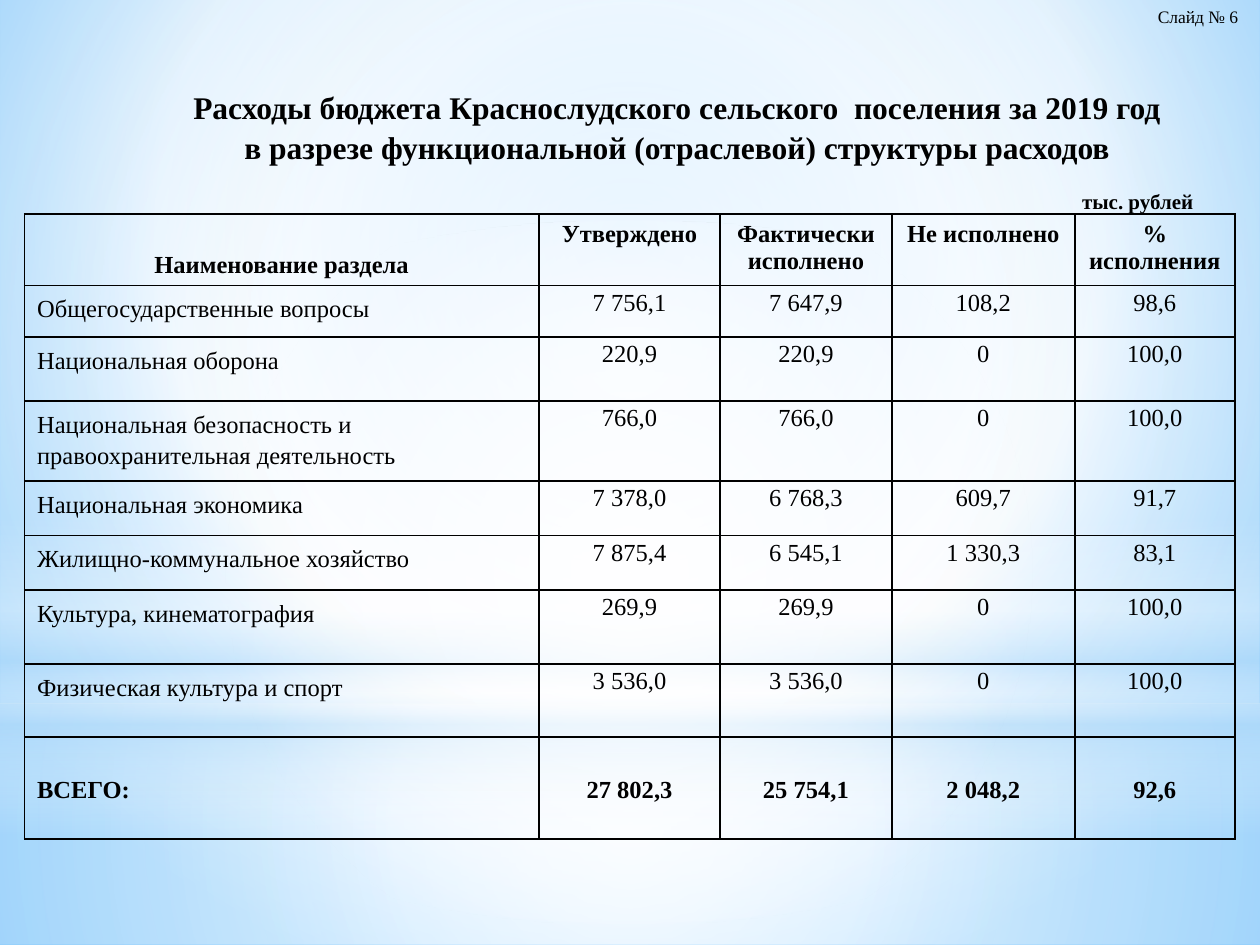
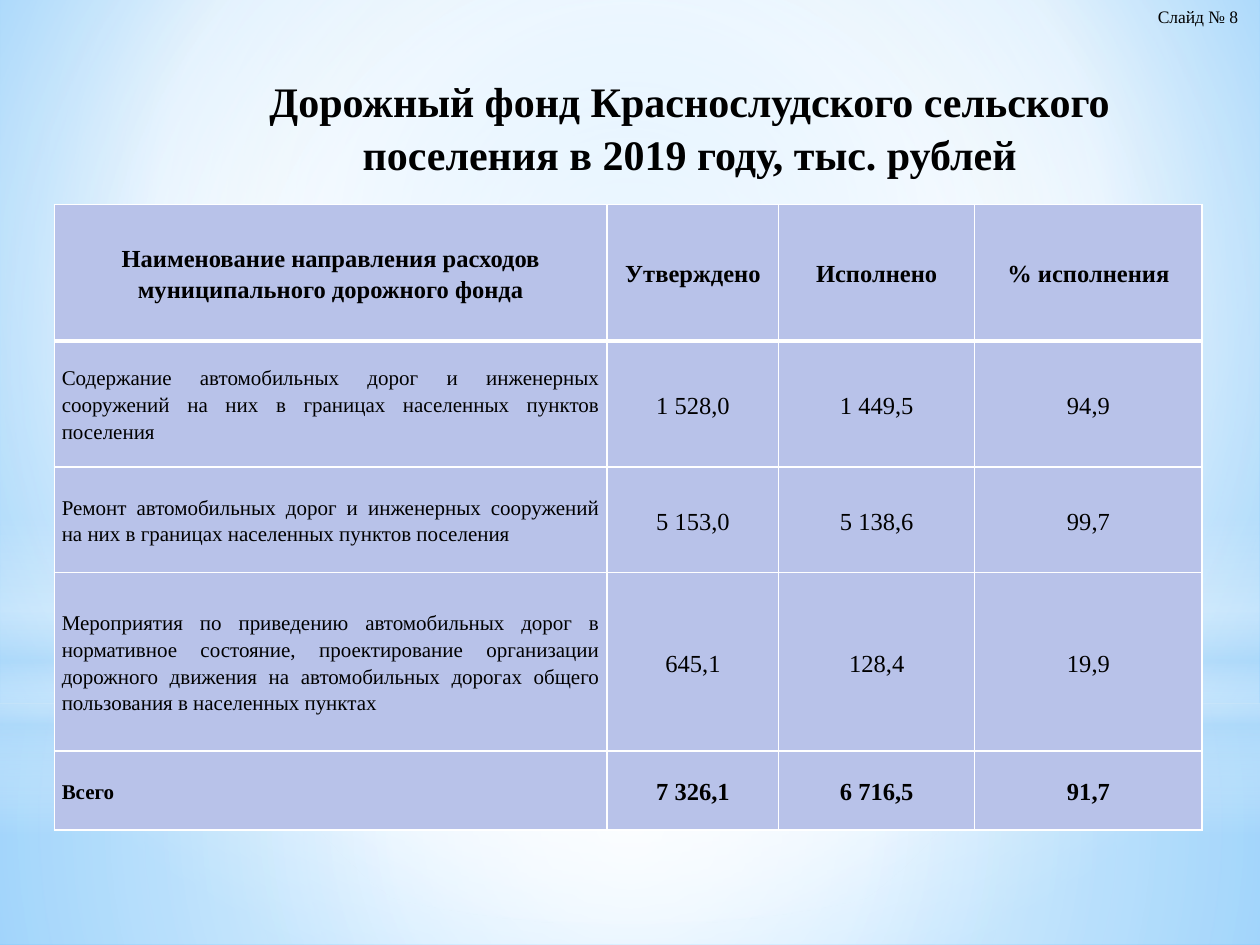
from dataclasses import dataclass

import lxml.etree
import pptx
import pptx.dml.color
import pptx.enum.shapes
import pptx.enum.text
import pptx.oxml.ns
import pptx.util

Pt = pptx.util.Pt
qn = pptx.oxml.ns.qn
Align = pptx.enum.text.PP_ALIGN
Anchor = pptx.enum.text.MSO_ANCHOR
Shape = pptx.enum.shapes.MSO_SHAPE


@dataclass(frozen=True)
class Theme:
    font: str = "Times New Roman"
    ink: str = "000000"
    white: str = "FFFFFF"
    sky: str = "B4DCFA"
    light_sky: str = "9ED5FF"
    deep_sky: str = "5BB9FF"
    cell: str = "B8C2E9"
    text_size: float = 14
    small_size: float = 12
    label_size: float = 10
    line_spacing: float = 1.15


THEME = Theme()
CENTRE = (50, 50, 50, 50)


@dataclass(frozen=True)
class TableLook:
    """Where the two tables differ."""
    border: str
    fill: str
    number_margins: tuple
    label_margins: tuple
    header_margins: tuple
    header_spacing: float
    header_rule: float
    label_size: float
    label_align: int
    header_anchors: tuple
    body_anchor: int


BUDGET_LOOK = TableLook(
    border=THEME.ink, fill="", number_margins=(5, 0), label_margins=(7.2, 3.6),
    header_margins=(7.2, 3.6), header_spacing=1.0, header_rule=1,
    label_size=THEME.text_size, label_align=Align.LEFT,
    header_anchors=(Anchor.BOTTOM, Anchor.TOP), body_anchor=Anchor.TOP)

ROAD_LOOK = TableLook(
    border=THEME.white, fill=THEME.cell, number_margins=(4.3, 0),
    label_margins=(4.3, 0), header_margins=(4.3, 0),
    header_spacing=THEME.line_spacing, header_rule=3,
    label_size=THEME.small_size, label_align=Align.JUSTIFY,
    header_anchors=(Anchor.MIDDLE, Anchor.MIDDLE), body_anchor=Anchor.MIDDLE)

BUDGET_ROWS = [
    ("Наименование раздела", "Утверждено", "Фактически исполнено", "Не исполнено",
     "% исполнения"),
    ("Общегосударственные вопросы", "7 756,1", "7 647,9", "108,2", "98,6"),
    ("Национальная оборона", "220,9", "220,9", "0", "100,0"),
    ("Национальная безопасность и правоохранительная деятельность",
     "766,0", "766,0", "0", "100,0"),
    ("Национальная экономика", "7 378,0", "6 768,3", "609,7", "91,7"),
    ("Жилищно-коммунальное хозяйство", "7 875,4", "6 545,1", "1 330,3", "83,1"),
    ("Культура, кинематография", "269,9", "269,9", "0", "100,0"),
    ("Физическая культура и спорт", "3 536,0", "3 536,0", "0", "100,0"),
    ("ВСЕГО:", "27 802,3", "25 754,1", "2 048,2", "92,6"),
]

ROAD_ROWS = [
    ("Наименование направления расходов муниципального дорожного фонда",
     "Утверждено", "Исполнено", "% исполнения"),
    ("Содержание автомобильных дорог и инженерных сооружений на них в границах "
     "населенных пунктов поселения", "1 528,0", "1 449,5", "94,9"),
    ("Ремонт автомобильных дорог и инженерных сооружений на них в границах "
     "населенных пунктов поселения", "5 153,0", "5 138,6", "99,7"),
    ("Мероприятия по приведению автомобильных дорог в нормативное состояние, "
     "проектирование организации дорожного движения на автомобильных дорогах "
     "общего пользования в населенных пунктах", "645,1", "128,4", "19,9"),
    ("Всего", "7 326,1", "6 716,5", "91,7"),
]


def rgb(colour):
    return pptx.dml.color.RGBColor.from_string(colour)


def add_child(parent, tag, **attributes):
    child = lxml.etree.SubElement(parent, qn(tag))
    for name, value in attributes.items():
        child.set(name, str(value))
    return child


# Text
def format_text(frame, size, bold=False, align=Align.LEFT, spacing=1.0):
    for para in frame.paragraphs:
        para.alignment = align
        para.line_spacing = spacing
        for span in para.runs:
            span.font.name = THEME.font
            span.font.size = Pt(size)
            span.font.bold = bold
            span.font.color.rgb = rgb(THEME.ink)


def set_margins(target, horizontal, vertical):
    target.margin_left = target.margin_right = Pt(horizontal)
    target.margin_top = target.margin_bottom = Pt(vertical)


def place_title(slide, text, left, width, size):
    title = slide.shapes.title
    title.left, title.top = Pt(left), Pt(36)
    title.width, title.height = Pt(width), Pt(72)
    frame = title.text_frame
    frame.text = text
    frame.word_wrap = True
    frame.auto_size = pptx.enum.text.MSO_AUTO_SIZE.NONE
    frame.vertical_anchor = Anchor.MIDDLE
    format_text(frame, size, bold=True, align=Align.CENTER, spacing=1.05)


def add_label(slide, text, left, top, width, height, size, vertical_margin=3.6, **style):
    box = slide.shapes.add_textbox(Pt(left), Pt(top), Pt(width), Pt(height))
    frame = box.text_frame
    frame.word_wrap = True
    set_margins(frame, 7.2, vertical_margin)
    frame.text = text
    format_text(frame, size, **style)


# Background shared through the slide master
def set_gradient(gradient, stops, focus=None):
    """Stops are (position, colour, opacity); without a focus the run is vertical."""
    for child in list(gradient):
        gradient.remove(child)
    stop_list = add_child(gradient, "a:gsLst")
    for position, colour, opacity in stops:
        stop = add_child(stop_list, "a:gs", pos=position * 1000)
        tint = add_child(stop, "a:srgbClr", val=colour)
        add_child(tint, "a:alpha", val=opacity * 1000)
    if focus:
        circle = add_child(gradient, "a:path", path="circle")
        sides = {side: share * 1000 for side, share in zip("ltrb", focus)}
        add_child(circle, "a:fillToRect", **sides)
    else:
        add_child(gradient, "a:lin", ang=90 * 60000, scaled=0)


def add_glow(slide, master, order, kind, top, height, stops, focus):
    glow = slide.shapes.add_shape(kind, 0, Pt(top), Pt(720), Pt(height))
    glow.shadow.inherit = False
    glow.line.fill.background()
    glow.fill.gradient()
    set_gradient(glow.element.spPr.find(qn("a:gradFill")), stops, focus)
    glow.element.nvSpPr.cNvPr.set("id", str(100 + order))
    master.shapes.element.insert(2 + order, glow.element)


def build_background(slide, master):
    white, sky = THEME.white, THEME.sky
    master.background.fill.gradient()
    set_gradient(
        next(master.element.iter(qn("a:gradFill"))),
        [(0, THEME.light_sky, 100), (60, white, 100), (100, THEME.deep_sky, 100)],
        (20, 10, 20, 60))
    glows = [
        (Shape.RECTANGLE, 401.8, 138.2,
         [(0, white, 91), (37, white, 76), (100, sky, 79)], CENTRE),
        (Shape.RECTANGLE, 0, 401.8,
         [(0, white, 89), (48, white, 62), (100, sky, 79)], CENTRE),
        (Shape.RECTANGLE, 296.6, 180,
         [(0, white, 0), (29, white, 30), (45, sky, 40), (55, white, 26),
          (65, sky, 60), (100, white, 0)], None),
        (Shape.OVAL, 126, 401.8, [(0, white, 100), (56, white, 0)], CENTRE),
    ]
    for order, glow in enumerate(glows):
        add_glow(slide, master, order, *glow)


# Tables
def set_borders(cell, colour, top=1, bottom=1):
    properties = cell._tc.get_or_add_tcPr()
    for side, width in (("L", 1), ("R", 1), ("T", top), ("B", bottom)):
        line = add_child(properties, f"a:ln{side}", w=Pt(width))
        fill = add_child(line, "a:solidFill")
        add_child(fill, "a:srgbClr", val=colour)


def format_cell(cell, look, is_header, is_total, is_label):
    rule = look.header_rule
    if is_header:
        set_borders(cell, look.border, bottom=rule)
        margins = look.header_margins
        anchor = look.header_anchors[0 if is_label else 1]
    else:
        set_borders(cell, look.border)
        margins = look.label_margins if is_label else look.number_margins
        anchor = Anchor.MIDDLE if is_total else look.body_anchor
    if look.fill:
        cell.fill.solid()
        cell.fill.fore_color.rgb = rgb(look.fill)
    else:
        cell.fill.background()
    set_margins(cell, *margins)
    cell.vertical_anchor = anchor
    body_label = is_label and not is_header
    format_text(
        cell.text_frame,
        look.label_size if body_label else THEME.text_size,
        bold=is_header or is_total,
        align=look.label_align if body_label else Align.CENTER,
        spacing=look.header_spacing if is_header else THEME.line_spacing)


def add_data_table(slide, rows, left, top, widths, heights, look):
    frame = slide.shapes.add_table(len(rows), len(widths), Pt(left), Pt(top),
                                   Pt(sum(widths)), Pt(sum(heights)))
    table = frame.table
    table.first_row = table.horz_banding = False
    for column, width in zip(table.columns, widths):
        column.width = Pt(width)
    for row, height in zip(table.rows, heights):
        row.height = Pt(height)
    for row_index, values in enumerate(rows):
        for column_index, value in enumerate(values):
            cell = table.cell(row_index, column_index)
            cell.text = value
            format_cell(cell, look, is_header=row_index == 0,
                        is_total=row_index == len(rows) - 1,
                        is_label=column_index == 0)


def add_page(deck, number):
    slide = deck.slides.add_slide(deck.slide_layouts[5])
    add_label(slide, f"Слайд № {number}", 654.5, 0, 65.5, 19.4, THEME.label_size)
    return slide


def main():
    deck = pptx.Presentation()
    deck.slide_width, deck.slide_height = Pt(720), Pt(540)

    # Spending by section
    budget = add_page(deck, 6)
    build_background(budget, deck.slide_master)
    place_title(budget,
                "Расходы бюджета Краснослудского сельского  поселения за 2019 год\n"
                "в разрезе функциональной (отраслевой) структуры расходов",
                left=85, width=604, size=18)
    add_label(budget, "тыс. рублей", 589, 107.5, 100, 14, THEME.small_size,
              vertical_margin=0, bold=True, align=Align.RIGHT)
    add_data_table(budget, BUDGET_ROWS, 14, 122.3,
                   widths=[294, 103.5, 98.2, 104.5, 91.5],
                   heights=[38.9, 29.5, 36.5, 42.5, 31.2, 31, 42.3, 41.8, 58.3],
                   look=BUDGET_LOOK)

    # Road fund
    road = add_page(deck, 8)
    place_title(road,
                "Дорожный фонд Краснослудского сельского поселения в 2019 году, "
                "тыс. рублей", left=93.6, width=601, size=24)
    add_data_table(road, ROAD_ROWS, 31, 116.8, widths=[316, 98, 112, 130],
                   heights=[78, 72, 60.5, 102, 45], look=ROAD_LOOK)

    deck.save("out.pptx")


if __name__ == "__main__":
    main()
